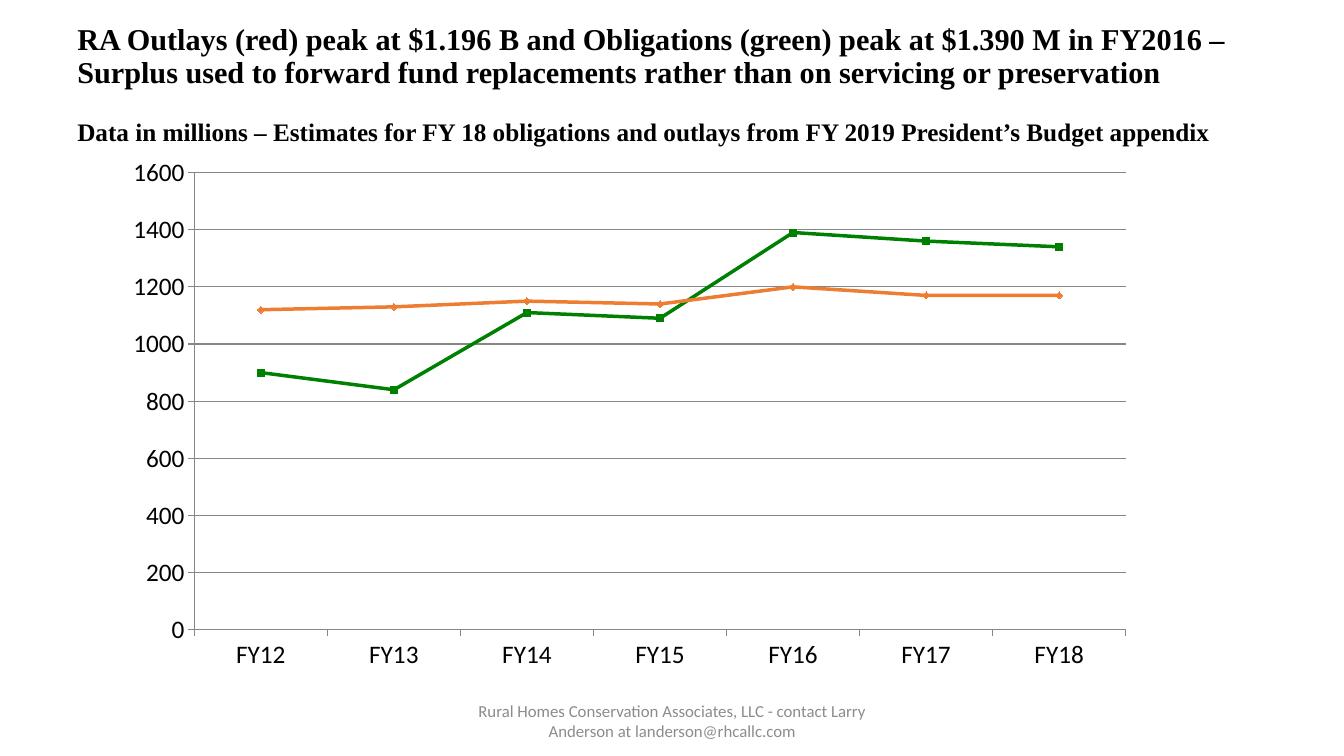
from lxml import etree
from pptx import Presentation
from pptx.chart.data import CategoryChartData
from pptx.dml.color import RGBColor
from pptx.enum.chart import XL_CHART_TYPE, XL_MARKER_STYLE, XL_TICK_MARK
from pptx.enum.text import MSO_ANCHOR, MSO_AUTO_SIZE, PP_ALIGN
from pptx.util import Pt

LINE_MARKERS = XL_CHART_TYPE.LINE_MARKERS
SQUARE, DIAMOND = XL_MARKER_STYLE.SQUARE, XL_MARKER_STYLE.DIAMOND
OUTSIDE = XL_TICK_MARK.OUTSIDE
MIDDLE = MSO_ANCHOR.MIDDLE
NO_FIT = MSO_AUTO_SIZE.NONE
LEFT, CENTER = PP_ALIGN.LEFT, PP_ALIGN.CENTER

COLORS = {"text": "000000", "footer": "8C8C8C", "grid": "868686",
          "obligations": "008000", "outlays": "ED7D31"}
SERIF, SANS = "Times New Roman", "Calibri"

HEADLINE = ("RA Outlays (red) peak at $1.196 B and Obligations (green) peak at "
            "$1.390 M in FY2016 – Surplus used to forward fund replacements "
            "rather than on servicing or preservation")
SUBHEAD = ("Data in millions – Estimates for FY 18 obligations and outlays "
           "from FY 2019 President’s Budget appendix")
FOOTER = ("Rural Homes Conservation Associates, LLC - contact Larry Anderson "
          "at landerson@rhcallc.com")

YEARS = [f"FY{year}" for year in range(12, 19)]
# name, color key, marker, values
SERIES = [
    ("Obligations", "obligations", SQUARE,
     (900, 840, 1110, 1090, 1390, 1360, 1340)),
    ("Outlays", "outlays", DIAMOND,
     (1120, 1130, 1150, 1140, 1200, 1170, 1170)),
]
PLOT = {"x": 0.073, "y": 0.03, "w": 0.812, "h": 0.871}


def rgb(key):
    return RGBColor.from_string(COLORS[key])


def apply(obj, values):
    for name, value in values.items():
        setattr(obj, name, value)


def style_font(font, color, **values):
    apply(font, values)
    font.color.rgb = rgb(color)


def style_line(line, color, width):
    line.color.rgb = rgb(color)
    line.width = Pt(width)


def add_paragraph(p, text, color, font, **values):
    apply(p, values)
    r = p.add_run()
    r.text = text
    style_font(r.font, color, **font)


def set_title(slide):
    sp = slide.shapes.title
    apply(sp, {"left": Pt(48), "top": Pt(21.6),
               "width": Pt(864), "height": Pt(102.24)})
    tf = sp.text_frame
    apply(tf, {"word_wrap": True, "auto_size": NO_FIT, "vertical_anchor": MIDDLE,
               "margin_left": Pt(7.2), "margin_right": Pt(7.2),
               "margin_top": Pt(0), "margin_bottom": Pt(24)})
    lines = [(tf.paragraphs[0], HEADLINE, 21.6, 0),
             (tf.add_paragraph(), SUBHEAD, 18, 20)]
    for p, text, size, gap in lines:
        add_paragraph(p, text, "text",
                      {"name": SERIF, "size": Pt(size), "bold": True},
                      alignment=LEFT, line_spacing=0.93, space_before=Pt(gap))


def add_footer(slide):
    sp = slide.shapes.add_textbox(Pt(318.24), Pt(500.4), Pt(324), Pt(28.8))
    tf = sp.text_frame
    apply(tf, {"word_wrap": True, "auto_size": NO_FIT, "vertical_anchor": MIDDLE})
    add_paragraph(tf.paragraphs[0], FOOTER, "footer",
                  {"name": SANS, "size": Pt(12)}, alignment=CENTER)


def set_plot_layout(chart):
    area = chart.plots[0]._element.getparent()
    ns = etree.QName(area).namespace
    for old in area.findall(f"{{{ns}}}layout"):
        area.remove(old)
    layout = etree.Element(f"{{{ns}}}layout")
    manual = etree.SubElement(layout, f"{{{ns}}}manualLayout")
    values = {"layoutTarget": "inner", "xMode": "edge", "yMode": "edge", **PLOT}
    for tag, value in values.items():
        etree.SubElement(manual, f"{{{ns}}}{tag}").set("val", str(value))
    area.insert(0, layout)


def add_budget_chart(slide):
    data = CategoryChartData()
    data.categories = YEARS
    for name, _, _, values in SERIES:
        data.add_series(name, values)
    chart = slide.shapes.add_chart(LINE_MARKERS, Pt(79), Pt(112),
                                   Pt(819.36), Pt(375.12), data).chart
    apply(chart, {"has_legend": False, "has_title": False})
    style_font(chart.font, "text", name=SANS, size=Pt(18))
    set_plot_layout(chart)

    # Axes and gridlines
    for axis in (chart.category_axis, chart.value_axis):
        axis.major_tick_mark = OUTSIDE
        style_line(axis.format.line, "grid", 0.75)
    apply(chart.value_axis, {"minimum_scale": 0, "maximum_scale": 1600,
                             "major_unit": 200, "has_major_gridlines": True})
    style_line(chart.value_axis.major_gridlines.format.line, "grid", 0.75)

    # Series lines and markers
    chart.plots[0].vary_by_categories = False
    for series, (_, color, style, _) in zip(chart.plots[0].series, SERIES):
        series.smooth = False
        style_line(series.format.line, color, 2.5)
        marker = series.marker
        apply(marker, {"style": style, "size": 5})
        marker.format.fill.solid()
        marker.format.fill.fore_color.rgb = rgb(color)
        style_line(marker.format.line, color, 0.75)


def main():
    prs = Presentation()
    apply(prs, {"slide_width": Pt(960), "slide_height": Pt(540)})
    slide = prs.slides.add_slide(prs.slide_layouts[5])
    set_title(slide)
    add_budget_chart(slide)
    add_footer(slide)
    prs.save("out.pptx")


if __name__ == "__main__":
    main()
